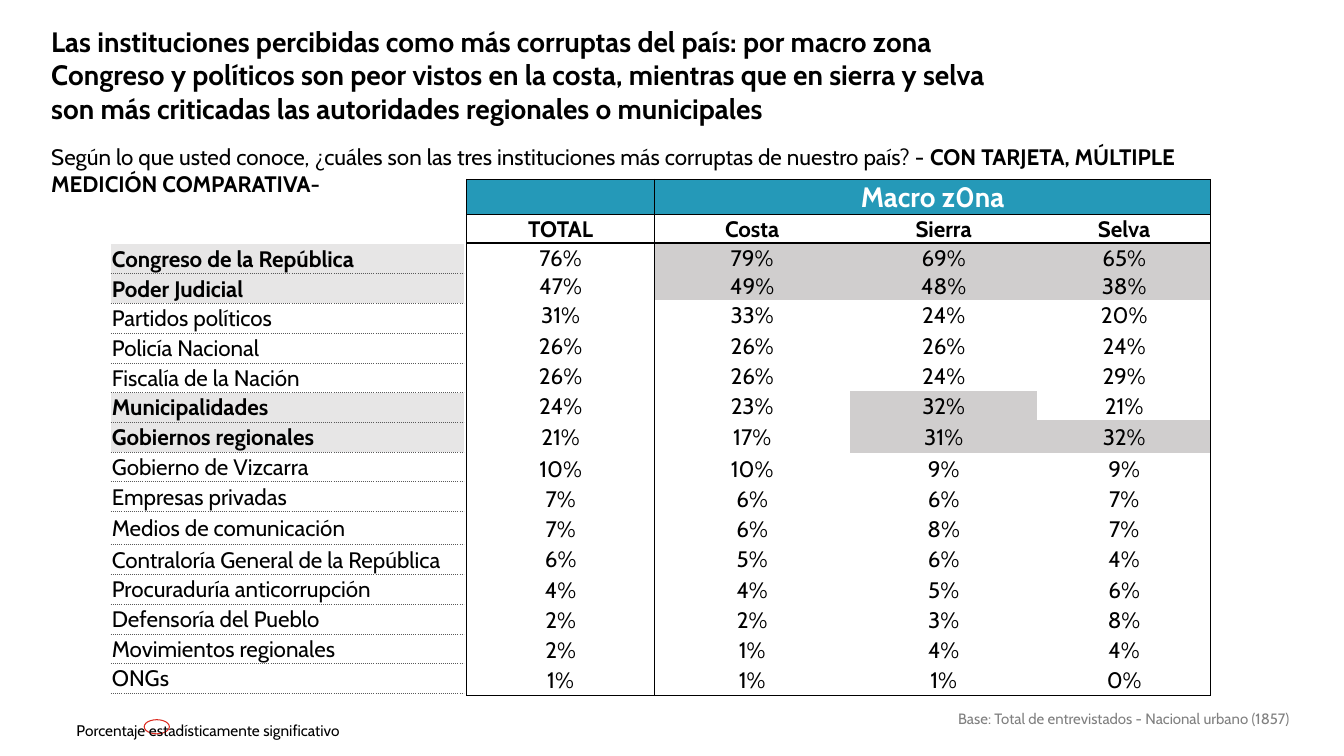
from dataclasses import dataclass

import pptx
import pptx.dml.color
import pptx.enum.shapes
import pptx.enum.text
import pptx.oxml
import pptx.oxml.ns
import pptx.util

Inches = pptx.util.Inches
Pt = pptx.util.Pt
ALIGN = pptx.enum.text.PP_ALIGN


@dataclass(frozen=True)
class Theme:
    font: str = "Cabin"
    black: str = "000000"
    white: str = "FFFFFF"
    gray: str = "808080"
    dots: str = "5A5A5A"
    teal: str = "2599B8"
    red: str = "DC291E"
    label_fill: str = "E7E6E6"
    value_fill: str = "D0CECE"
    title: float = 20
    body: float = 16
    legend: float = 11
    base: float = 10.7


THEME = Theme()

HEADINGS = ["TOTAL", "Costa", "Sierra", "Selva"]
RESULTS = [
    ("Congreso de la República", 76, 79, 69, 65),
    ("Poder Judicial", 47, 49, 48, 38),
    ("Partidos políticos", 31, 33, 24, 20),
    ("Policía Nacional", 26, 26, 26, 24),
    ("Fiscalía de la Nación", 26, 26, 24, 29),
    ("Municipalidades", 24, 23, 32, 21),
    ("Gobiernos regionales", 21, 17, 31, 32),
    ("Gobierno de Vizcarra", 10, 10, 9, 9),
    ("Empresas privadas", 7, 6, 6, 7),
    ("Medios de comunicación", 7, 6, 8, 7),
    ("Contraloría General de la República", 6, 5, 6, 4),
    ("Procuraduría anticorrupción", 4, 4, 5, 6),
    ("Defensoría del Pueblo", 2, 2, 3, 8),
    ("Movimientos regionales", 2, 1, 4, 4),
    ("ONGs", 1, 1, 1, 0),
]
HIGHLIGHTS = {
    "Congreso de la República": (1, 2, 3),
    "Poder Judicial": (1, 2, 3),
    "Municipalidades": (2,),
    "Gobiernos regionales": (2, 3),
}


def rgb(color):
    return pptx.dml.color.RGBColor.from_string(color)


def add_run(p, text, size=THEME.body, color=THEME.black, bold=False):
    r = p.add_run()
    r.text = text
    r.font.name = THEME.font
    r.font.size = Pt(size)
    r.font.bold = bold
    r.font.color.rgb = rgb(color)


def add_text(slide, box, paragraphs, align=ALIGN.LEFT, wrap=True, spacing=None, **font):
    tf = slide.shapes.add_textbox(*map(Inches, box)).text_frame
    tf.word_wrap = wrap
    for i, runs in enumerate(paragraphs):
        p = tf.paragraphs[0] if i == 0 else tf.add_paragraph()
        p.alignment = align
        p.line_spacing = spacing
        for text, bold in runs:
            add_run(p, text, bold=bold, **font)


def add_ellipse(slide, box):
    sp = slide.shapes.add_shape(pptx.enum.shapes.MSO_SHAPE.OVAL, *map(Inches, box))
    sp.shadow.inherit = False
    sp.fill.solid()
    sp.fill.fore_color.rgb = rgb(THEME.white)
    sp.line.color.rgb = rgb(THEME.red)
    sp.line.width = Pt(0.75)


def add_grid(slide, left, top, cols, rows):
    box = map(Inches, (left, top, sum(cols), sum(rows)))
    table = slide.shapes.add_table(len(rows), len(cols), *box).table
    table.first_row = table.horz_banding = False
    for column, width in zip(table.columns, cols):
        column.width = Inches(width)
    for row, height in zip(table.rows, rows):
        row.height = Inches(height)
    return table


def set_borders(cell, sides, color, width, dash):
    tc_pr = cell._tc.get_or_add_tcPr()
    ns = pptx.oxml.ns.nsdecls("a")
    for side in "LRTB":
        paint = "<a:noFill/>"
        if side in sides:
            paint = (f'<a:solidFill><a:srgbClr val="{color}"/></a:solidFill>'
                     f'<a:prstDash val="{dash}"/>')
        tc_pr.append(pptx.oxml.parse_xml(
            f'<a:ln{side} {ns} w="{Pt(width)}">{paint}</a:ln{side}>'))


def fill_cell(cell, text="", fill=None, sides="", line=(THEME.black, 1, "solid"),
              align=ALIGN.CENTER, **font):
    cell.margin_left = cell.margin_right = cell.margin_top = Inches(0.01)
    cell.margin_bottom = 0
    cell.vertical_anchor = pptx.enum.text.MSO_ANCHOR.MIDDLE
    set_borders(cell, sides, *line)
    if fill:
        cell.fill.solid()
        cell.fill.fore_color.rgb = rgb(fill)
    else:
        cell.fill.background()
    if text:
        p = cell.text_frame.paragraphs[0]
        p.alignment = align
        add_run(p, text, **font)


def add_results(slide):
    heights = [0.35, 0.28, 0.29, 0.28, 0.29, 0.32, 0.29, 0.29, 0.33] + [0.3] * 8
    table = add_grid(slide, 4.63, 1.78, [1.86, 1.94, 1.86, 1.72], heights)
    table.cell(0, 1).merge(table.cell(0, 3))
    for c, text in enumerate(["", "Macro z0na"]):
        fill_cell(table.cell(0, c), text, THEME.teal, "LRTB",
                  size=THEME.title, color=THEME.white, bold=True)
    for c, heading in enumerate(HEADINGS):
        sides = ("L" if c < 2 else "") + ("R" if c in (0, 3) else "")
        fill_cell(table.cell(1, c), heading, sides=sides + "TB", bold=True)
        for r, (name, *values) in enumerate(RESULTS, 2):
            edge = "T" if r == 2 else "B" if r == len(heights) - 1 else ""
            fill = THEME.value_fill if c in HIGHLIGHTS.get(name, ()) else None
            fill_cell(table.cell(r, c), f"{values[c]}%", fill, sides + edge)


def add_labels(slide):
    heights = [0.33 if r == 9 else 0.295 for r in range(len(RESULTS))]
    table = add_grid(slide, 1.1, 2.42, [3.5], heights)
    for r, (name, *_) in enumerate(RESULTS):
        marked = name in HIGHLIGHTS
        fill_cell(table.cell(r, 0), name, THEME.label_fill if marked else None,
                  "TB" if r else "B", (THEME.dots, 0.5, "sysDot"),
                  ALIGN.LEFT, bold=marked)


def main():
    prs = pptx.Presentation()
    prs.slide_width, prs.slide_height = Inches(13.33), Inches(7.5)
    slide = prs.slides.add_slide(prs.slide_layouts[6])
    add_text(slide, (5.94, 7.01, 6.95, 0.26),
             [[("Base: Total de entrevistados - Nacional urbano (1857)", False)]],
             align=ALIGN.RIGHT, spacing=0.9, size=THEME.base, color=THEME.gray)
    add_text(slide, (0.41, 0.19, 9.74, 1.03), [
        [("Las instituciones percibidas como más corruptas del país: por macro zona", True)],
        [("Congreso y políticos son peor vistos en la costa, mientras que en sierra y selva "
          "son más criticadas las autoridades regionales o municipales", True)],
    ], size=THEME.title)
    add_text(slide, (0.41, 1.37, 12.29, 0.64), [
        [("Según lo que usted conoce, ¿cuáles son las tres instituciones más corruptas "
          "de nuestro país? - ", False), ("CON TARJETA, MÚLTIPLE", True)],
        [("MEDICIÓN COMPARATIVA-", True)],
    ])
    add_ellipse(slide, (1.43, 7.14, 0.25, 0.14))
    add_text(slide, (0.66, 7.1, 2.82, 0.29),
             [[("Porcentaje estadísticamente significativo", False)]],
             wrap=False, size=THEME.legend)
    add_results(slide)
    add_labels(slide)
    prs.save("out.pptx")


if __name__ == "__main__":
    main()
